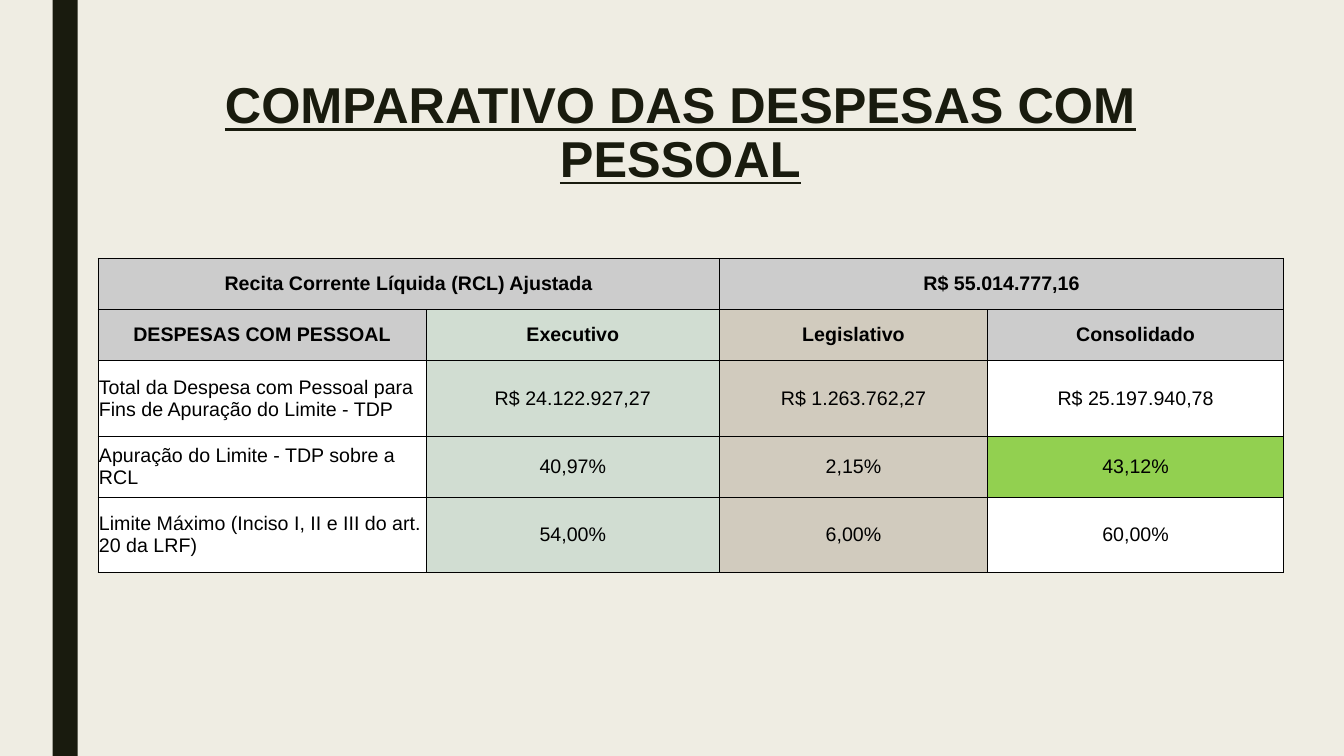
"""Build the slide comparing personnel expenses with the legal limits."""
from lxml.etree import SubElement
from pptx import Presentation
from pptx.dml.color import RGBColor
from pptx.enum.shapes import MSO_SHAPE
from pptx.enum.text import MSO_ANCHOR, PP_ALIGN
from pptx.oxml.ns import qn
from pptx.util import Pt

COLORS = {
    "background": "EFEDE3",
    "dark": "191B0E",
    "black": "000000",
    "gray": "CCCCCC",
    "sage": "D1DDD2",
    "sand": "D1CBBE",
    "white": "FFFFFF",
    "green": "92D050",
}


def write(frame, text, size=14, color="black", bold=False, underline=None,
          align=PP_ALIGN.CENTER, anchor=MSO_ANCHOR.MIDDLE, spacing=None):
    frame.word_wrap = True
    frame.vertical_anchor = anchor
    para = frame.paragraphs[0]
    para.alignment = align
    para.line_spacing = spacing
    span = para.add_run()
    span.text = text
    span.font.name = "Arial"
    span.font.size = Pt(size)
    span.font.bold = bold
    span.font.underline = underline
    span.font.color.rgb = RGBColor.from_string(COLORS[color])


def draw_borders(cell, width=0.6):
    properties = cell._tc.get_or_add_tcPr()
    for position, side in enumerate(("a:lnL", "a:lnR", "a:lnT", "a:lnB")):
        line = properties.makeelement(qn(side), {"w": str(Pt(width))})
        fill = SubElement(line, qn("a:solidFill"))
        SubElement(fill, qn("a:srgbClr"), val=COLORS["black"])
        properties.insert(position, line)


deck = Presentation()
deck.slide_width, deck.slide_height = Pt(960), Pt(540)
page = deck.slides.add_slide(deck.slide_layouts[5])
page.background.fill.solid()
page.background.fill.fore_color.rgb = RGBColor.from_string(COLORS["background"])

stripe = page.shapes.add_shape(MSO_SHAPE.RECTANGLE, Pt(37.5), 0, Pt(18), Pt(540))
stripe.shadow.inherit = False
stripe.fill.solid()
stripe.fill.fore_color.rgb = RGBColor.from_string(COLORS["dark"])
stripe.line.fill.background()

title = page.shapes.title
title.left, title.top, title.width, title.height = Pt(108), Pt(54), Pt(756), Pt(117)
write(title.text_frame, "COMPARATIVO DAS DESPESAS COM PESSOAL", size=36, color="dark",
      bold=True, underline=True, anchor=MSO_ANCHOR.TOP, spacing=0.89)

rows = [
    ["Recita Corrente Líquida (RCL) Ajustada", "", "R$ 55.014.777,16", ""],
    ["DESPESAS COM PESSOAL", "Executivo", "Legislativo", "Consolidado"],
    ["Total da Despesa com Pessoal para Fins de Apuração do Limite - TDP",
     "R$ 24.122.927,27", "R$ 1.263.762,27", "R$ 25.197.940,78"],
    ["Apuração do Limite - TDP sobre a RCL", "40,97%", "2,15%", "43,12%"],
    ["Limite Máximo (Inciso I, II e III do art. 20 da LRF)",
     "54,00%", "6,00%", "60,00%"],
]
body_fills = ["white", "sage", "sand", "white"]
fills = [
    ["gray"] * 4,
    ["gray", "sage", "sand", "gray"],
    body_fills,
    body_fills[:3] + ["green"],
    body_fills,
]
column_widths = [234.5, 209.5, 191.5, 211.5]
row_heights = [36.5, 36.5, 54.5, 43, 54]

frame = page.shapes.add_table(len(rows), len(column_widths), Pt(70), Pt(184.5),
                              Pt(sum(column_widths)), Pt(sum(row_heights)))
table = frame.table
for column, width in zip(table.columns, column_widths):
    column.width = Pt(width)
for row, height in zip(table.rows, row_heights):
    row.height = Pt(height)
for start in (0, 2):
    table.cell(0, start).merge(table.cell(0, start + 1))

for r, texts in enumerate(rows):
    for c, text in enumerate(texts):
        cell = table.cell(r, c)
        cell.fill.solid()
        cell.fill.fore_color.rgb = RGBColor.from_string(COLORS[fills[r][c]])
        draw_borders(cell)
        cell.margin_left = cell.margin_right = Pt(0.7)
        cell.margin_top = cell.margin_bottom = Pt(0.7)
        cell.vertical_anchor = MSO_ANCHOR.MIDDLE
        if text:
            is_label = r > 1 and c == 0
            write(cell.text_frame, text, bold=r < 2, anchor=None,
                  align=PP_ALIGN.LEFT if is_label else PP_ALIGN.CENTER)
            cell.vertical_anchor = MSO_ANCHOR.MIDDLE

deck.save("out.pptx")
